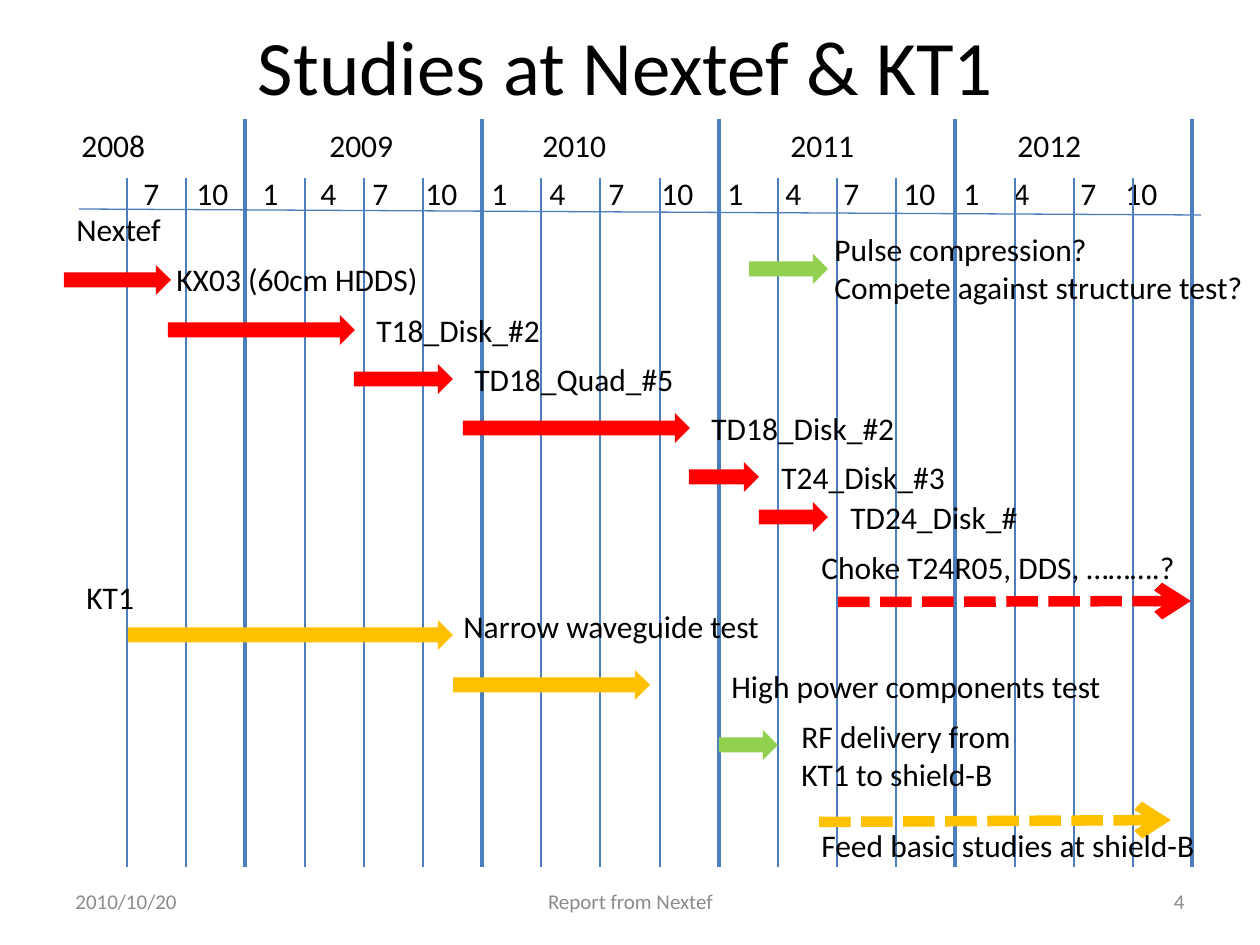
"""Build a timeline slide of the studies at Nextef and KT1."""
from lxml.etree import SubElement
from pptx import Presentation
from pptx.dml.color import RGBColor
from pptx.enum.dml import MSO_LINE
from pptx.enum.shapes import MSO_CONNECTOR, MSO_SHAPE
from pptx.enum.text import MSO_ANCHOR, MSO_AUTO_SIZE, PP_ALIGN
from pptx.oxml.ns import qn
from pptx.util import Pt

PX = 914400 / 126
COLORS = {"text": "000000", "footer": "8C8C8C", "grid": "4B7EBC",
          "red": "FF0000", "amber": "FFC000", "green": "92D050"}


def px(*lengths):
    return [round(length * PX) for length in lengths]


def write(box, lines, size=18, color="text", align=PP_ALIGN.LEFT, wrap=True,
          anchor=MSO_ANCHOR.TOP, tabs=()):
    frame = slide.shapes.add_textbox(*px(*box)).text_frame
    frame.word_wrap = wrap
    frame.vertical_anchor = anchor
    if anchor == MSO_ANCHOR.TOP:
        frame.auto_size = MSO_AUTO_SIZE.SHAPE_TO_FIT_TEXT
    for number, line in enumerate(lines):
        paragraph = frame.add_paragraph() if number else frame.paragraphs[0]
        paragraph.alignment = align
        if tabs:
            stops = SubElement(paragraph._p.get_or_add_pPr(), qn("a:tabLst"))
            for stop in px(*tabs):
                SubElement(stops, qn("a:tab"), pos=str(stop), algn="l")
        run = paragraph.add_run()
        run.text = line
        run.font.size = Pt(size)
        run.font.name = "Calibri"
        run.font.color.rgb = RGBColor.from_string(COLORS[color])


def rule(ends, color, width):
    connector = slide.shapes.add_connector(MSO_CONNECTOR.STRAIGHT, *px(*ends))
    connector.line.color.rgb = RGBColor.from_string(COLORS[color])
    connector.line.width = Pt(width)
    SubElement(connector._element.spPr, qn("a:effectLst"))
    return connector


deck = Presentation()
deck.slide_width, deck.slide_height = px(1260, 945)
slide = deck.slides.add_slide(deck.slide_layouts[6])

write((59, 0, 1134, 129), ["Studies at Nextef & KT1"], 44,
      align=PP_ALIGN.CENTER, anchor=MSO_ANCHOR.MIDDLE)

rule((79, 209, 1201, 215), "grid", 0.75)
month_stops = (43, 96, 162, 220, 272, 325, 391, 449, 508, 561, 627, 685, 743,
               803, 863, 913, 980, 1025)
months = ["7", "10"] + ["1", "4", "7", "10"] * 4
write((88, 168, 1104, 50), ["\t" + "\t".join(months)], tabs=month_stops)
write((69, 120, 1123, 50), ["\t".join(["2008", "2009", "2010", "2011", "2012"])],
      tabs=(248, 461, 709, 936))

for quarter in range(19):
    x = 127 + round(quarter * 59.17)
    new_year = quarter % 4 == 2
    rule((x, 119 if new_year else 178, x, 867), "grid", 2.25 if new_year else 0.75)

periods = [
    (64, 265, 107, "red"), (168, 315, 187, "red"), (354, 364, 99, "red"),
    (463, 413, 227, "red"), (689, 462, 70, "red"), (759, 502, 69, "red"),
    (128, 620, 325, "amber"), (453, 670, 197, "amber"),
    (719, 730, 59, "green"), (749, 254, 79, "green"),
]
for left, top, width, color in periods:
    period = slide.shapes.add_shape(MSO_SHAPE.RIGHT_ARROW, *px(left, top, width, 30))
    period.shadow.inherit = False
    period.fill.solid()
    period.fill.fore_color.rgb = RGBColor.from_string(COLORS[color])
    period.line.fill.background()

plans = [((838, 602, 1191, 601), "red"), ((819, 822, 1171, 820), "amber")]
for ends, color in plans:
    plan = rule(ends, color, 6)
    plan.line.dash_style = MSO_LINE.SQUARE_DOT
    SubElement(plan.line._get_or_add_ln(), qn("a:tailEnd"), type="arrow")

studies = [
    (64, 204, 111, "Nextef"), (164, 254, 270, "KX03 (60cm HDDS)"),
    (364, 305, 190, "T18_Disk_#2"), (462, 354, 227, "TD18_Quad_#5"),
    (699, 403, 210, "TD18_Disk_#2"), (769, 452, 190, "T24_Disk_#3"),
    (838, 492, 194, "TD24_Disk_#"), (809, 542, 397, "Choke T24R05, DDS, ……….?"),
    (74, 572, 73, "KT1"), (451, 601, 324, "Narrow waveguide test"),
    (719, 661, 399, "High power components test"),
    (809, 820, 403, "Feed basic studies at shield-B"),
]
for left, top, width, study in studies:
    write((left, top, width, 50), [study], wrap=False)
write((789, 711, 268, 92), ["RF delivery from KT1 to shield-B"])
write((822, 224, 438, 89), ["Pulse compression?", "Compete against structure test?"],
      wrap=False)

footers = [(63, 294, "2010/10/20", PP_ALIGN.LEFT),
           (431, 399, "Report from Nextef", PP_ALIGN.CENTER),
           (903, 294, "4", PP_ALIGN.RIGHT)]
for left, width, footer, align in footers:
    write((left, 876, width, 50), [footer], 12, "footer", align,
          anchor=MSO_ANCHOR.MIDDLE)

deck.save("out.pptx")
